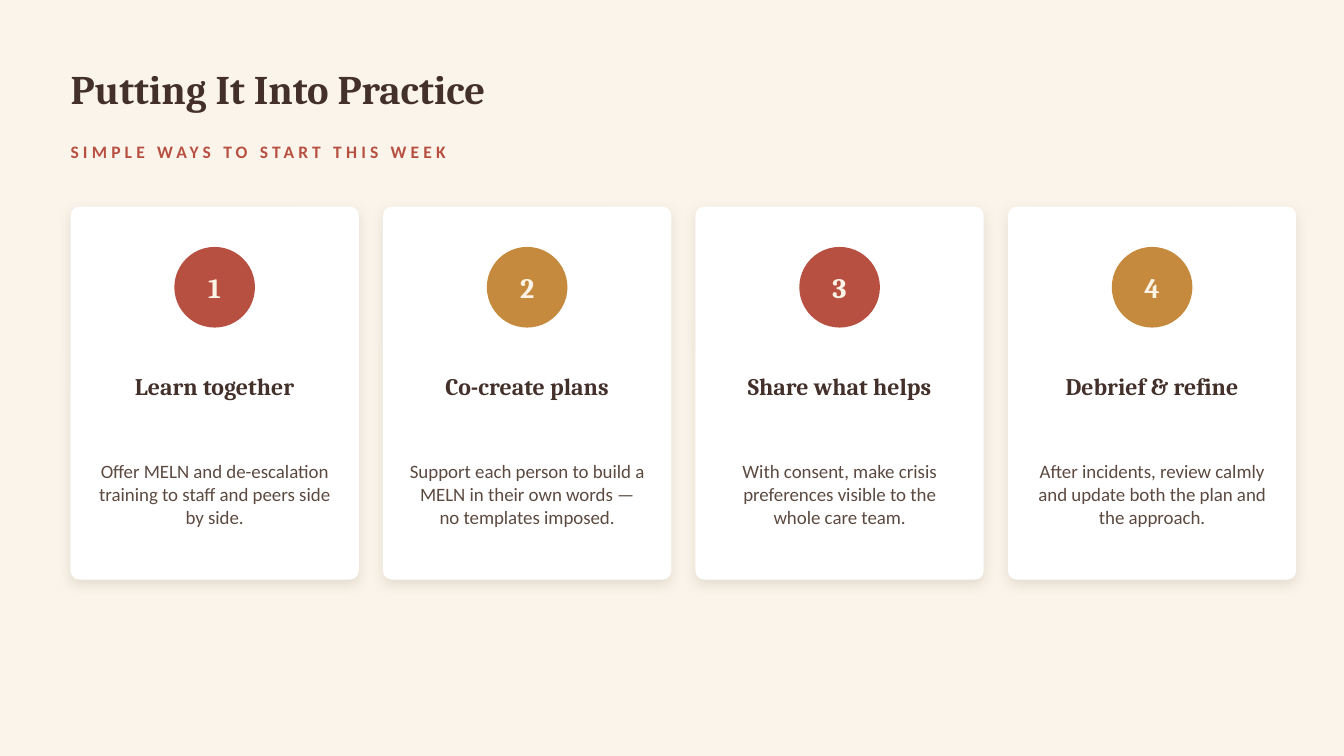
"""Build the "Putting It Into Practice" slide with four numbered step cards."""
from lxml.etree import SubElement
from pptx import Presentation
from pptx.dml.color import RGBColor
from pptx.enum.shapes import MSO_SHAPE as SHAPE
from pptx.enum.text import MSO_ANCHOR as ANCHOR, PP_ALIGN as ALIGN
from pptx.oxml.ns import qn
from pptx.util import Pt

TITLE = "Putting It Into Practice"
SUBTITLE = "SIMPLE WAYS TO START THIS WEEK"
STEPS = [
    ("Learn together", "Offer MELN and de-escalation training to staff and peers side by side."),
    ("Co-create plans", "Support each person to build a MELN in their own words — no templates imposed."),
    ("Share what helps", "With consent, make crisis preferences visible to the whole care team."),
    ("Debrief & refine", "After incidents, review calmly and update both the plan and the approach."),
]
COLORS = {
    "background": "FAF4EA", "card": "FFFFFF", "shadow": "9A8873",
    "heading": "43302A", "body": "5C4A41", "number": "FBF3E6",
    "red": "B85042", "gold": "C68A3E",
}
BADGES = ["red", "gold"]
HEAD_FONT, BODY_FONT = "Cambria", "Calibri"

LEFT, HEADER_W = 50.4, 856.8
CARD_TOP, CARD_W, CARD_H, PITCH = 147.6, 205.92, 266.4, 223.2
BADGE, PAD = 57.6, 18


def color(name):
    return RGBColor.from_string(COLORS[name])


def write(s, text, font, size, ink, bold=True, align=ALIGN.CENTER):
    tf = s.text_frame
    tf.word_wrap = True
    tf.vertical_anchor = ANCHOR.MIDDLE
    tf.margin_left = tf.margin_top = tf.margin_right = tf.margin_bottom = 0
    tf.text = text
    p = tf.paragraphs[0]
    p.alignment = align
    r = p.runs[0]
    r.font.name, r.font.size, r.font.bold = font, Pt(size), bold
    r.font.color.rgb = color(ink)
    return r


def add_text(slide, box, *args, **kwargs):
    return write(slide.shapes.add_textbox(*map(Pt, box)), *args, **kwargs)


def add_shape(slide, kind, box, fill):
    s = slide.shapes.add_shape(kind, *map(Pt, box))
    s.shadow.inherit = False
    s.fill.solid()
    s.fill.fore_color.rgb = color(fill)
    s.line.fill.background()
    return s


def add_soft_shadow(s):
    effects = s._element.spPr.find(qn("a:effectLst"))
    shadow = SubElement(effects, qn("a:outerShdw"), blurRad=str(Pt(9)), dist=str(Pt(3)),
                        dir="5400000", algn="ctr", rotWithShape="0")
    tint = SubElement(shadow, qn("a:srgbClr"), val=COLORS["shadow"])
    SubElement(tint, qn("a:alpha"), val="22000")


def add_card(slide, index, heading, body):
    x = LEFT + index * PITCH
    card = add_shape(slide, SHAPE.ROUNDED_RECTANGLE, (x, CARD_TOP, CARD_W, CARD_H), "card")
    card.adjustments[0] = 0.03
    add_soft_shadow(card)
    badge_box = (x + (CARD_W - BADGE) / 2, CARD_TOP + 28.8, BADGE, BADGE)
    badge = add_shape(slide, SHAPE.OVAL, badge_box, BADGES[index % len(BADGES)])
    write(badge, str(index + 1), HEAD_FONT, 20, "number")
    text_x, text_w = x + PAD, CARD_W - 2 * PAD
    add_text(slide, (text_x, CARD_TOP + 100.8, text_w, 54), heading, HEAD_FONT, 17, "heading")
    add_text(slide, (text_x, CARD_TOP + 154.8, text_w, 100.8), body, BODY_FONT, 13.5, "body",
             bold=False)


def main():
    prs = Presentation()
    prs.slide_width, prs.slide_height = Pt(960), Pt(540)
    slide = prs.slides.add_slide(prs.slide_layouts[6])
    slide.background.fill.solid()
    slide.background.fill.fore_color.rgb = color("background")
    add_text(slide, (LEFT, 32.4, HEADER_W, 61.2), TITLE, HEAD_FONT, 29, "heading",
             align=ALIGN.LEFT)
    r = add_text(slide, (LEFT, 97.2, HEADER_W, 21.6), SUBTITLE, BODY_FONT, 12.5, "red",
                 align=ALIGN.LEFT)
    r.font._element.set("spc", "300")
    for index, (heading, body) in enumerate(STEPS):
        add_card(slide, index, heading, body)
    prs.save("out.pptx")


if __name__ == "__main__":
    main()
